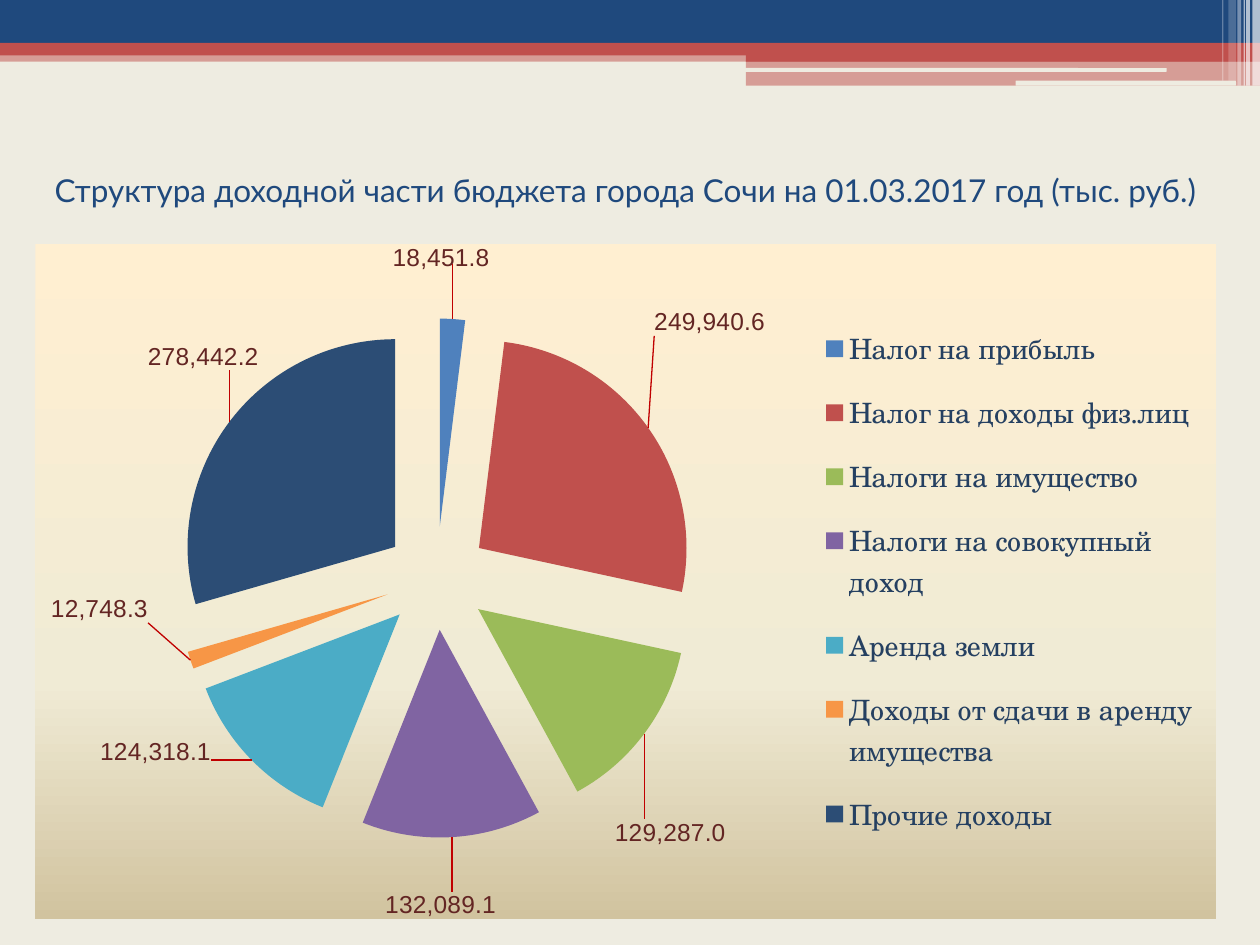
from lxml import etree
from pptx import Presentation
from pptx.chart.data import CategoryChartData
from pptx.dml.color import RGBColor
from pptx.enum.chart import XL_CHART_TYPE as ChartType
from pptx.enum.chart import XL_LABEL_POSITION as LabelPosition
from pptx.enum.chart import XL_LEGEND_POSITION as LegendPosition
from pptx.enum.shapes import MSO_SHAPE as Preset
from pptx.enum.text import MSO_ANCHOR, PP_ALIGN
from pptx.oxml import parse_xml
from pptx.oxml.ns import nsdecls, qn
from pptx.util import Inches, Pt

CREAM = RGBColor(0xEE, 0xEC, 0xE1)
NAVY = RGBColor(0x1F, 0x49, 0x7D)
RED = RGBColor(0xC0, 0x50, 0x4D)
WHITE = RGBColor(0xFF, 0xFF, 0xFF)
BLACK = RGBColor(0x00, 0x00, 0x00)
LEGEND_BLUE = RGBColor(0x25, 0x40, 0x61)
LABEL_BROWN = RGBColor(0x63, 0x25, 0x23)
LEADER_RED = RGBColor(0xC0, 0x00, 0x00)
BACKDROP = (
    (0, RGBColor(0xFF, 0xEF, 0xD1)),
    (65, RGBColor(0xF0, 0xEB, 0xD5)),
    (100, RGBColor(0xD1, 0xC3, 0x9F)),
)

TITLE = "Структура доходной части бюджета города Сочи на 01.03.2017 год (тыс. руб.)"
INCOME = (
    ("Налог на прибыль", 18451.8, RGBColor(0x4F, 0x81, 0xBD), (-0.01, -0.07)),
    ("Налог на доходы физ.лиц", 249940.6, RED, (0, -0.13)),
    ("Налоги на имущество", 129287.0, RGBColor(0x9B, 0xBB, 0x59), (-0.03, 0.12)),
    ("Налоги на совокупный доход", 132089.1, RGBColor(0x80, 0x64, 0xA2), (-0.01, 0.07)),
    ("Аренда земли", 124318.1, RGBColor(0x4B, 0xAC, 0xC6), (-0.03, -0.04)),
    ("Доходы от сдачи в аренду имущества", 12748.3, RGBColor(0xF7, 0x96, 0x46), (-0.03, -0.1)),
    ("Прочие доходы", 278442.2, RGBColor(0x2C, 0x4D, 0x75), (0.03, -0.07)),
)
BANDS = (
    (0, 0.4, 10, 0.09, RED, 50),
    (0, 0, 10, 0.34, NAVY, 100),
    (0, 0.34, 10, 0.1, RED, 100),
    (5.92, 0.39, 4.08, 0.1, RED, 100),
    (5.92, 0.48, 4.08, 0.2, RED, 50),
)
GROOVES = ((5.91, 0.54, 3.35, 0.03), (8.06, 0.64, 1.75, 0.04))
STRIPES = (
    (9.94, 0.06, 0.68, 65),
    (9.89, 0.03, 0.68, 65),
    (9.87, 0.01, 0.68, 60),
    (9.82, 0.03, 0.68, 40),
    (9.75, 0.06, 0.64, 20),
    (9.7, 0.01, 0.64, 30),
)


def add_bar(slide, left, top, width, height, color, opacity=100, preset=Preset.RECTANGLE):
    bar = slide.shapes.add_shape(
        preset, Inches(left), Inches(top), Inches(width), Inches(height))
    bar.shadow.inherit = False
    bar.line.fill.background()
    bar.fill.solid()
    bar.fill.fore_color.rgb = color
    if opacity < 100:
        tint = bar._element.spPr.find(qn("a:solidFill"))[0]
        etree.SubElement(tint, qn("a:alpha")).set("val", str(opacity * 1000))


def add_header(slide):
    for band in BANDS:
        add_bar(slide, *band)
    for groove in GROOVES:
        add_bar(slide, *groove, CREAM, preset=Preset.ROUNDED_RECTANGLE)
    for left, width, height, opacity in STRIPES:
        add_bar(slide, left, 0, width, height, WHITE, opacity)


def style_font(font, face, size, color):
    font.name = face
    font.size = Pt(size)
    font.color.rgb = color


def set_title(slide):
    title = slide.shapes.title
    title.left, title.top = Inches(0.28), Inches(0.92)
    title.width, title.height = Inches(9.37), Inches(1.17)
    title.text_frame.word_wrap = True
    title.text_frame.vertical_anchor = MSO_ANCHOR.MIDDLE
    heading = title.text_frame.paragraphs[0]
    heading.alignment = PP_ALIGN.CENTER
    run = heading.add_run()
    run.text = TITLE
    style_font(run.font, "Lato", 18, NAVY)


def layout_xml(**settings):
    entries = "".join(f'<c:{key} val="{value}"/>' for key, value in settings.items())
    return parse_xml(
        f'<c:layout {nsdecls("c")}><c:manualLayout>{entries}</c:manualLayout></c:layout>')


def fill_backdrop(chart_space):
    stops = "".join(
        f'<a:gs pos="{place * 1000}"><a:srgbClr val="{color}"/></a:gs>'
        for place, color in BACKDROP)
    chart_space.find(qn("c:chart")).addnext(parse_xml(
        f'<c:spPr {nsdecls("c", "a")}><a:gradFill><a:gsLst>{stops}</a:gsLst>'
        '<a:lin ang="5400000" scaled="0"/></a:gradFill>'
        '<a:ln><a:noFill/></a:ln></c:spPr>'))


def style_labels(labels):
    labels.show_value = True
    labels.number_format = "#,##0.0"
    labels.number_format_is_linked = False
    style_font(labels.font, "Arial", 14, LABEL_BROWN)
    labels.position = LabelPosition.OUTSIDE_END


def style_slices(series):
    style_labels(series.data_labels)
    for index, (_, _, color, _) in enumerate(INCOME):
        point = series.points[index]
        point.format.fill.solid()
        point.format.fill.fore_color.rgb = color
        style_font(point.data_label.font, "Arial", 14, LABEL_BROWN)
        point.data_label.position = LabelPosition.OUTSIDE_END

    pie = series._element
    pie.find(qn("c:dPt")).addprevious(
        parse_xml(f'<c:explosion {nsdecls("c")} val="25"/>'))
    labels = pie.find(qn("c:dLbls"))
    for label, (_, _, _, (x, y)) in zip(labels.findall(qn("c:dLbl")), INCOME):
        offset = layout_xml(x=x, y=y)
        label.find(qn("c:idx")).addnext(offset)
        offset.addnext(parse_xml(
            f'<c:numFmt {nsdecls("c")} formatCode="#,##0.0" sourceLinked="0"/>'))
    leader_switch = labels.find(qn("c:showLeaderLines"))
    if leader_switch is None:
        leader_switch = etree.SubElement(labels, qn("c:showLeaderLines"))
    leader_switch.set("val", "1")
    leader_switch.addnext(parse_xml(
        f'<c:leaderLines {nsdecls("c", "a")}><c:spPr><a:ln w="9525"><a:solidFill>'
        f'<a:srgbClr val="{LEADER_RED}"/></a:solidFill></a:ln></c:spPr></c:leaderLines>'))


def place_plot(plot_area):
    for old in plot_area.findall(qn("c:layout")):
        plot_area.remove(old)
    plot_area.insert(0, layout_xml(
        layoutTarget="inner", xMode="edge", yMode="edge", x=0.12, y=0.11, w=0.44, h=0.77))


def add_legend(chart):
    chart.has_legend = True
    legend = chart.legend
    legend.position = LegendPosition.RIGHT
    legend.include_in_layout = False
    style_font(legend.font, "TeX Gyre Schola", 16, LEGEND_BLUE)
    frame = legend._element
    for old in frame.findall(qn("c:layout")):
        frame.remove(old)
    frame.find(qn("c:legendPos")).addnext(
        layout_xml(xMode="edge", yMode="edge", x=0.66, y=0.09, w=0.33, h=0.82))


def add_income_pie(slide):
    income = CategoryChartData(number_format="#,##0.0")
    income.categories = [name for name, *_ in INCOME]
    income.add_series("Series 1", [amount for _, amount, *_ in INCOME])
    chart = slide.shapes.add_chart(
        ChartType.PIE, Inches(0.28), Inches(1.94), Inches(9.37), Inches(5.35), income).chart
    chart.has_title = False
    style_font(chart.font, "TeX Gyre Schola", 18, BLACK)
    chart.plots[0].vary_by_categories = True
    style_slices(chart.plots[0].series[0])
    add_legend(chart)
    chart_space = chart._chartSpace
    place_plot(chart_space.find(qn("c:chart")).find(qn("c:plotArea")))
    fill_backdrop(chart_space)


def main():
    deck = Presentation()
    deck.slide_width, deck.slide_height = Inches(10), Inches(7.5)
    slide = deck.slides.add_slide(deck.slide_layouts[5])
    slide.background.fill.solid()
    slide.background.fill.fore_color.rgb = CREAM
    add_header(slide)
    set_title(slide)
    add_income_pie(slide)
    deck.save("out.pptx")


if __name__ == "__main__":
    main()
